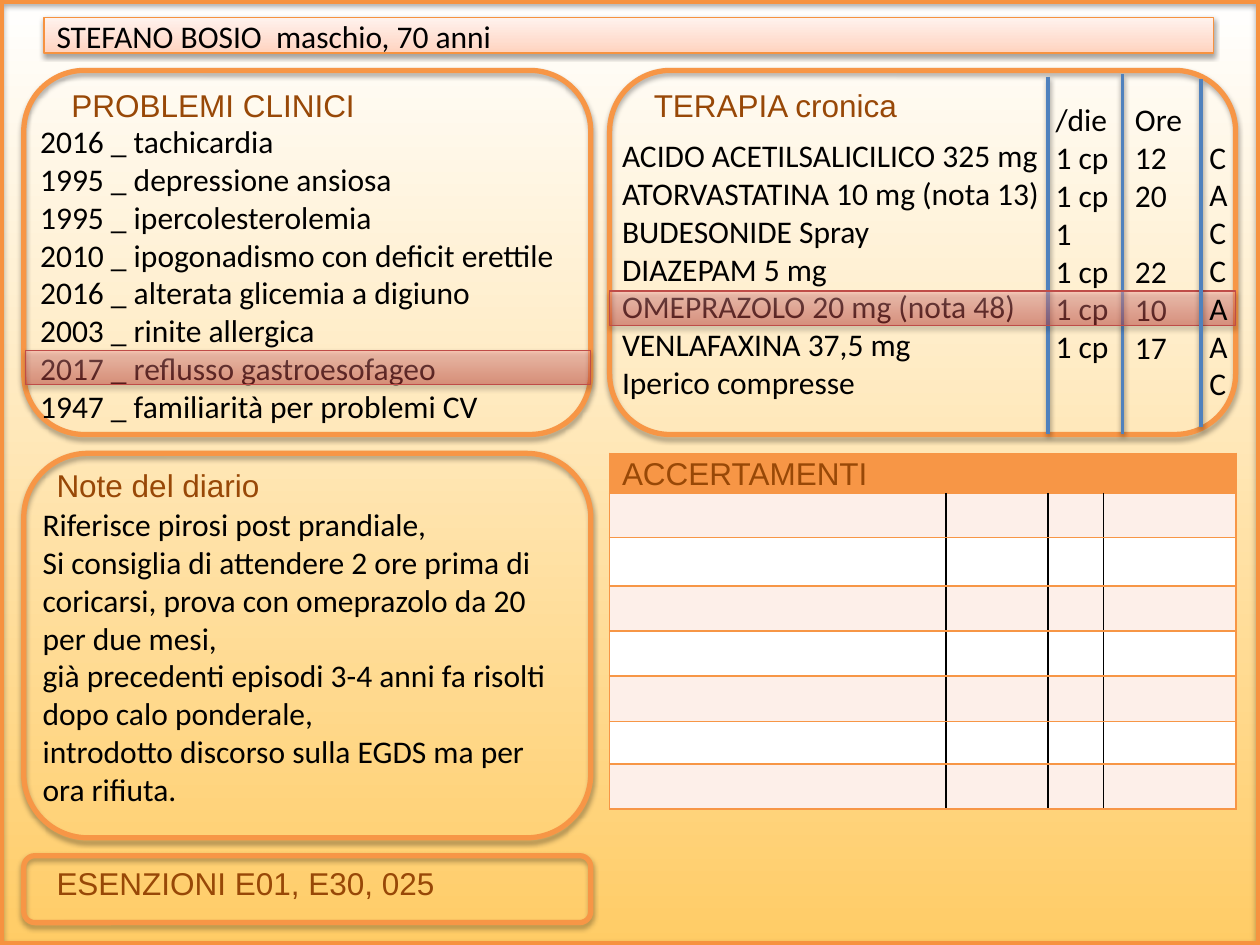
import pptx
import pptx.util
import pptx.dml.color
import pptx.enum.shapes
import pptx.enum.text
import pptx.oxml.ns
import lxml.etree

Cm, Pt = pptx.util.Cm, pptx.util.Pt
Kind = pptx.enum.shapes.MSO_SHAPE
qn = pptx.oxml.ns.qn

# Theme: colours, fonts and type size
theme = {
    "text": "000000", "title": "984807", "panel": "F79646", "frame": "F69240",
    "rule": "4F81BD", "mark": "BF4C48", "grid": "000000",
    "bands": ("FDEFE9", "FFFFFF"),
    "body": "Calibri", "head": "Arial", "size": 18,
}
# Gradient stops: position, colour, opacity in percent
page_fade = [(0, "FFFFFF", 100), (100, "FFCC66", 100)]
name_fade = [(0, "FFD2BD", 100), (35, "FFDED0", 100), (100, "FFF2ED", 100)]
mark_fade = [(0, "D1403C", 42), (100, "FFA6A5", 42)]

# Content: boxes are left, top, width, height in cm
patient = "STEFANO BOSIO  maschio, 70 anni"
panels = [
    (0.48, 1.42, 11.43, 7.34), (12.29, 1.42, 12.62, 7.34),
    (0.48, 9.14, 11.43, 7.75), (0.48, 17.25, 11.43, 1.35),
]
titles = [
    ("PROBLEMI CLINICI", 1.19, 1.6),
    ("TERAPIA cronica", 12.93, 1.6),
    ("Note del diario", 0.89, 9.27),
    ("ESENZIONI E01, E30, 025", 0.89, 17.3),
]
tests = ("ACCERTAMENTI", 12.29, 9.02)
issues = [
    "2016 _ tachicardia", "1995 _ depressione ansiosa",
    "1995 _ ipercolesterolemia", "2010 _ ipogonadismo con deficit erettile",
    "2016 _ alterata glicemia a digiuno", "2003 _ rinite allergica",
    "2017 _ reflusso gastroesofageo", "1947 _ familiarità per problemi CV",
]
drugs = [
    "ACIDO ACETILSALICILICO 325 mg", "ATORVASTATINA 10 mg (nota 13)",
    "BUDESONIDE Spray", "DIAZEPAM 5 mg", "OMEPRAZOLO 20 mg (nota 48)",
    "VENLAFAXINA 37,5 mg", "Iperico compresse",
]
doses = ["/die", "1 cp", "1 cp", "1", "1 cp", "1 cp", "1 cp"]
hours = ["Ore", "12", "20", "", "22", "10", "17"]
types = ["C", "A", "C", "C", "A", "A", "C"]
notes = [
    "Riferisce pirosi post prandiale,",
    "Si consiglia di attendere 2 ore prima di coricarsi, prova con "
    "omeprazolo da 20 per due mesi,",
    "già precedenti episodi 3-4 anni fa risolti dopo calo ponderale,",
    "introdotto discorso sulla EGDS ma per ora rifiuta.",
]
marks = [(0.51, 7.06, 11.4, 0.69), (12.29, 5.87, 12.62, 0.69)]
rules = [(21.13, 1.55, 8.74), (22.63, 1.5, 8.74), (24.21, 1.6, 8.61)]
cols = [6.78, 2.06, 1.12, 2.67]
rows = [0.81, 0.89, 0.97, 0.91, 0.91, 0.91, 0.86, 0.91]

deck = pptx.Presentation()
deck.slide_width, deck.slide_height = Cm(25.4), Cm(19.05)
slide = deck.slides.add_slide(deck.slide_layouts[6])


def paint(name):
    return pptx.dml.color.RGBColor.from_string(theme.get(name, name))


def node(up, tag, **attrs):
    return lxml.etree.SubElement(up, qn(tag), attrs)


def tint(up, code, part):
    color = node(up, "a:srgbClr", val=code)
    if part < 100:
        node(color, "a:alpha", val=str(part * 1000))


def fade(fill, stops, angle):
    fill.gradient()
    fill.gradient_angle = angle
    group = fill.gradient_stops[0]._gs.getparent()
    for old in list(group):
        group.remove(old)
    for spot, code, part in stops:
        tint(node(group, "a:gs", pos=str(spot * 1000)), code, part)


def shade(effect, part=35):
    drop = node(effect, "a:outerShdw", blurRad=str(Pt(3.1)),
                dist=str(Pt(1.7)), dir="5400000", rotWithShape="0")
    tint(drop, "000000", part)


def shape(kind, box, line, width, stops=None):
    item = slide.shapes.add_shape(kind, *map(Cm, box))
    if stops:
        fade(item.fill, stops, 90)
    else:
        item.fill.background()
    item.line.color.rgb = paint(line)
    item.line.width = Pt(width)
    item.shadow.inherit = False
    shade(item._element.spPr.find(qn("a:effectLst")))
    return item


def style(frame, font="body", color="text"):
    frame.word_wrap = True
    for para in frame.paragraphs:
        para.alignment = pptx.enum.text.PP_ALIGN.LEFT
        for run in para.runs:
            run.font.name = theme[font]
            run.font.size = Pt(theme["size"])
            run.font.color.rgb = paint(color)


def text(lines, box, font="body", color="text"):
    frame = slide.shapes.add_textbox(*map(Cm, box)).text_frame
    frame.text = "\n".join(line for line in lines if line)
    style(frame, font, color)
    # A missing entry leaves one line of space above the next one
    if "" in lines:
        gap = frame.paragraphs[lines.index("")]
        gap.space_before = Pt(theme["size"] * 1.22)


def title(label, left, top):
    text([label], (left, top, 9, 1.02), "head", "title")


def rule(x, top, end):
    line = slide.shapes.add_connector(
        pptx.enum.shapes.MSO_CONNECTOR.STRAIGHT, Cm(x), Cm(top), Cm(x), Cm(end))
    line.line.color.rgb = paint("rule")
    line.line.width = Pt(2)
    shade(node(line._element.spPr, "a:effectLst"), 38)


def edge(props, side, name):
    line = node(props, "a:ln" + side, w=str(Pt(1)))
    if name:
        tint(node(line, "a:solidFill"), theme[name], 100)
    else:
        node(line, "a:noFill")


def grid(left, top):
    box = map(Cm, (left, top, sum(cols), sum(rows)))
    table = slide.shapes.add_table(len(rows), len(cols), *box).table
    for col, width in zip(table.columns, cols):
        col.width = Cm(width)
    for r, high in enumerate(rows):
        table.rows[r].height = Cm(high)
        inner = "grid" if r else None
        for c in range(len(cols)):
            cell = table.cell(r, c)
            cell.margin_top = cell.margin_bottom = 0
            node(cell.text_frame.paragraphs[0]._p, "a:endParaRPr", sz="1000")
            props = cell._tc.get_or_add_tcPr()
            edge(props, "L", inner if c else "panel")
            edge(props, "R", inner if c < len(cols) - 1 else "panel")
            edge(props, "T", "panel")
            edge(props, "B", "panel")
            cell.fill.solid()
            cell.fill.fore_color.rgb = paint(
                theme["bands"][(r - 1) % 2] if r else "panel")


# Background, panels and page frame
fade(slide.background.fill, page_fade, 270)
for box in panels:
    shape(Kind.ROUNDED_RECTANGLE, box, "panel", 3)
shape(Kind.RECTANGLE, (0, 0, 25.4, 19.05), "frame", 4.5)

# Patient bar
bar = shape(Kind.RECTANGLE, (0.89, 0.36, 23.57, 0.71), "frame", 0.75, name_fade)
bar.text_frame.text = patient
bar.text_frame.vertical_anchor = pptx.enum.text.MSO_ANCHOR.MIDDLE
style(bar.text_frame)

# Titles and lists
for entry in titles:
    title(*entry)
text(issues, (0.56, 2.34, 11.07, 7.19))
text(drugs, (12.29, 2.62, 11.05, 5.64))
for place in rules[:2]:
    rule(*place)
text(doses, (21.03, 1.9, 1.7, 6.4))
text(hours, (22.63, 1.9, 1.57, 6.4))
text(notes, (0.61, 10.06, 11.07, 6.4))

# Highlights of the new problem and its drug
for box in marks:
    shape(Kind.RECTANGLE, box, "mark", 0.75, mark_fade)

# Test table, then the drug class column
grid(12.29, 9.14)
title(*tests)
rule(*rules[2])
text(types, (24.13, 2.65, 1.27, 5.64))

deck.save("out.pptx")
